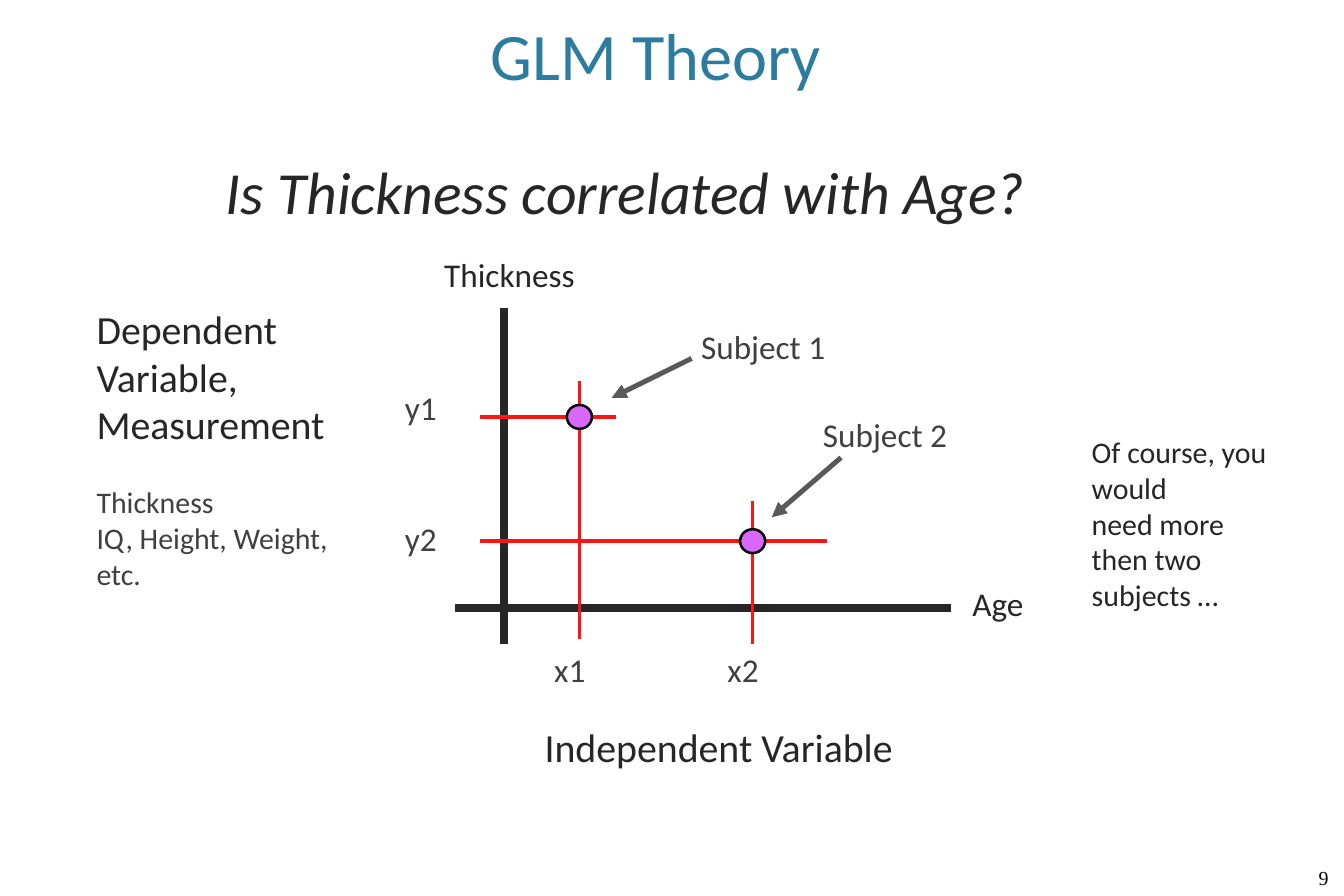
import pptx
import pptx.dml.color
import pptx.enum.shapes
import pptx.enum.text
import pptx.oxml.ns
import pptx.util
from lxml import etree
from pptx.util import Inches

COLORS = {
    "title": "2C7C9F",
    "ink": "262626",
    "label": "404040",
    "arrow": "595959",
    "guide": "FD1414",
    "marker": "DA68FF",
    "black": "000000",
}

SUBJECTS = [
    {
        "number": 1, "x": 4.85, "y": 3.49,
        "x_guide": (3.19, 5.35), "y_guide": (4.02, 5.16),
        "y_label_top": 3.19, "caption": (5.77, 2.68),
        "arrow": ((5.79, 3), (5.12, 3.33)),
    },
    {
        "number": 2, "x": 6.3, "y": 4.53,
        "x_guide": (4.19, 5.39), "y_guide": (4.02, 6.92),
        "y_label_top": 4.29, "caption": (6.79, 3.42),
        "arrow": ((7.04, 3.83), (6.46, 4.33)),
    },
]


def rgb(color):
    return pptx.dml.color.RGBColor.from_string(COLORS[color])


def add_text(slide, box, lines, size, color="ink", font="Calibri",
             italic=False, wrap=False):
    text_box = slide.shapes.add_textbox(*map(Inches, box))
    frame = text_box.text_frame
    frame.word_wrap = wrap
    frame.auto_size = pptx.enum.text.MSO_AUTO_SIZE.SHAPE_TO_FIT_TEXT
    for index, line in enumerate(lines):
        paragraph = frame.add_paragraph() if index else frame.paragraphs[0]
        run = paragraph.add_run()
        run.text = line
        run.font.name = font
        run.font.size = pptx.util.Pt(size)
        run.font.italic = italic
        run.font.color.rgb = rgb(color)
    return frame


def add_title(slide, title):
    frame = add_text(slide, (0.71, 0.08, 9.56, 0.75), [title], 40, "title", wrap=True)
    frame.auto_size = pptx.enum.text.MSO_AUTO_SIZE.NONE
    frame.vertical_anchor = pptx.enum.text.MSO_ANCHOR.BOTTOM
    frame.paragraphs[0].alignment = pptx.enum.text.PP_ALIGN.CENTER


def add_line(slide, start, end, color, width, arrow=False):
    line = slide.shapes.add_connector(
        pptx.enum.shapes.MSO_CONNECTOR.STRAIGHT, *map(Inches, start + end))
    line.line.color.rgb = rgb(color)
    line.line.width = pptx.util.Pt(width)
    if arrow:
        etree.SubElement(line.line._get_or_add_ln(),
                         pptx.oxml.ns.qn("a:tailEnd"), type="triangle")
    etree.SubElement(line._element.spPr, pptx.oxml.ns.qn("a:effectLst"))


def add_marker(slide, x, y, width=0.21, height=0.2):
    marker = slide.shapes.add_shape(
        pptx.enum.shapes.MSO_SHAPE.OVAL,
        Inches(x - width / 2), Inches(y - height / 2), Inches(width), Inches(height))
    marker.shadow.inherit = False
    marker.fill.solid()
    marker.fill.fore_color.rgb = rgb("marker")
    marker.line.color.rgb = rgb("black")
    marker.line.width = pptx.util.Pt(1.5)


def add_subject(slide, subject):
    number, x, y = subject["number"], subject["x"], subject["y"]
    top, bottom = subject["x_guide"]
    left, right = subject["y_guide"]
    add_line(slide, (x, top), (x, bottom), "guide", 2.25)
    add_line(slide, (left, y), (right, y), "guide", 2.25)
    add_text(slide, (x - 0.31, 5.39, 0.52, 0.44), [f"x{number}"], 20, "label")
    add_text(slide, (3.29, subject["y_label_top"], 0.52, 0.44),
             [f"y{number}"], 20, "label")
    add_text(slide, subject["caption"] + (1.47, 0.44),
             [f"Subject {number}"], 20, "label")
    add_line(slide, *subject["arrow"], "arrow", 3, arrow=True)


def add_plot(slide):
    add_line(slide, (4.22, 2.58), (4.22, 5.39), "ink", 4.5)
    add_line(slide, (3.81, 5.09), (7.96, 5.09), "ink", 4.5)
    add_text(slide, (3.62, 2.08, 1.51, 0.44), ["Thickness"], 20)
    add_text(slide, (8.04, 4.83, 0.69, 0.44), ["Age"], 20)
    for subject in SUBJECTS:
        add_subject(slide, subject)
    for subject in SUBJECTS:
        add_marker(slide, subject["x"], subject["y"])


def main():
    deck = pptx.Presentation()
    deck.slide_width = Inches(11.25)
    deck.slide_height = Inches(7.5)
    slide = deck.slides.add_slide(deck.slide_layouts[6])

    add_title(slide, "GLM Theory")
    add_text(slide, (1.79, 1.25, 8.12, 0.71),
             ["Is Thickness correlated with Age?"], 36, italic=True)
    add_text(slide, (0.71, 2.5, 2.39, 1.31),
             ["Dependent", "Variable,", "Measurement"], 24)
    add_text(slide, (0.71, 4, 2.33, 1.01),
             ["Thickness", "IQ, Height, Weight,", "etc."], 18, "label")
    add_plot(slide)
    add_text(slide, (4.46, 6, 3.38, 0.5), ["Independent Variable"], 24)
    add_text(slide, (9.04, 3.58, 1.67, 1.62),
             ["Of course, you would", "need more then two", "subjects …"],
             18, wrap=True)
    add_text(slide, (10.94, 7.2, 0.3, 0.3), ["9"], 12, "black", "Times New Roman")

    deck.save("out.pptx")


if __name__ == "__main__":
    main()
